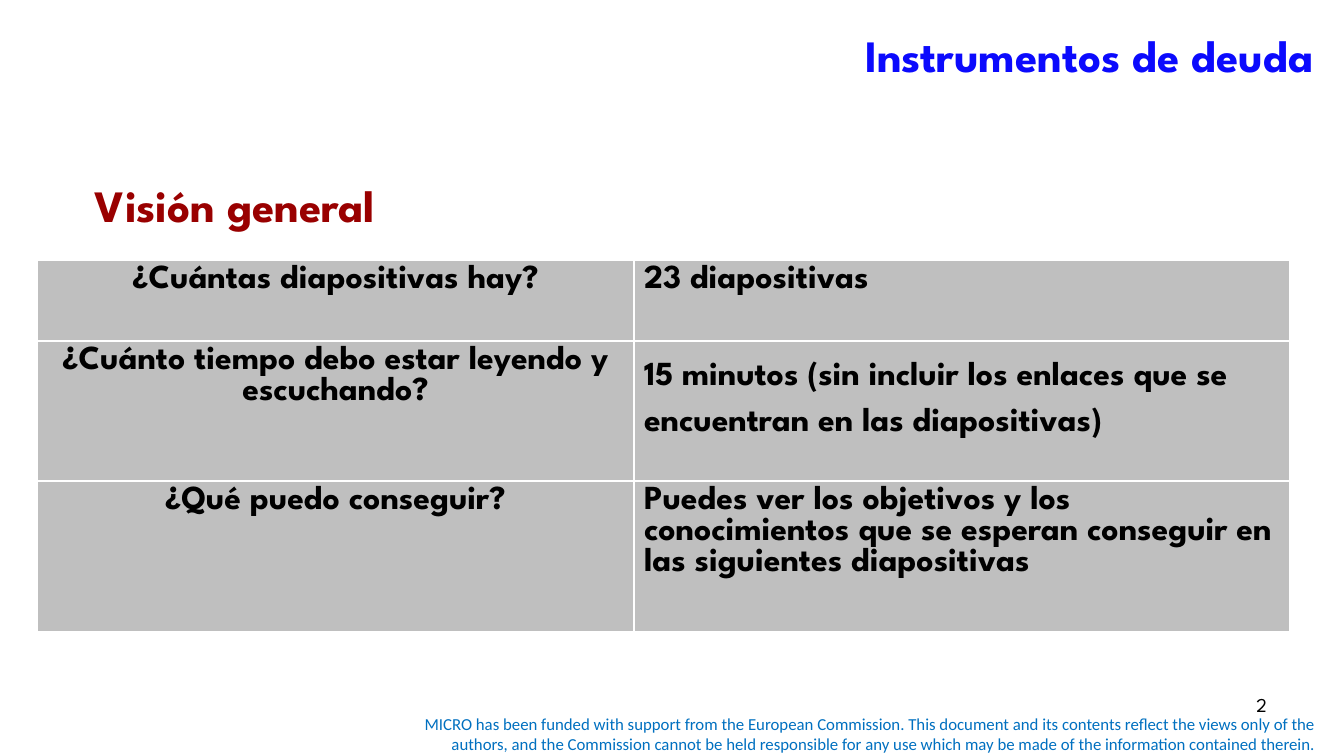
from lxml import etree
from pptx import Presentation
from pptx import util as u
from pptx.dml.color import RGBColor
from pptx.enum import text
from pptx.oxml import ns

PX = 914400 / 100.8
COLORS = {
    "title": "0B0AFD",
    "heading": "990000",
    "ink": "000000",
    "cell": "BFBFBF",
    "grid": "FFFFFF",
    "funding": "0070C0",
}
LEFT, CENTER, RIGHT = text.PP_ALIGN.LEFT, text.PP_ALIGN.CENTER, text.PP_ALIGN.RIGHT
TOP, MIDDLE, BOTTOM = text.MSO_ANCHOR.TOP, text.MSO_ANCHOR.MIDDLE, text.MSO_ANCHOR.BOTTOM


def px(length):
    return u.Emu(round(length * PX))


class SlideBuilder:
    font = "League Spartan"

    def __init__(self, deck):
        self.page = deck.slides.add_slide(deck.slide_layouts[6])

    def add_words(self, frame, words, size, color, align=LEFT, bold=True, font=None, spacing=None):
        para = frame.paragraphs[0]
        para.alignment = align
        if spacing:
            para.line_spacing = spacing
        span = para.add_run()
        span.text = words
        span.font.name = font or self.font
        span.font.size = u.Pt(size)
        span.font.bold = bold
        span.font.color.rgb = RGBColor.from_string(COLORS[color])

    def label(self, place, words, size, color, anchor=TOP, bottom_inset=5, **style):
        box = self.page.shapes.add_textbox(*map(px, place))
        frame = box.text_frame
        frame.word_wrap = True
        frame.vertical_anchor = anchor
        frame.margin_bottom = px(bottom_inset)
        self.add_words(frame, words, size, color, **style)

    def table(self, left, top, widths, heights, rows):
        """Each row holds a centred question and an answer with its line spacing."""
        frame = self.page.shapes.add_table(
            len(heights), len(widths), px(left), px(top), px(sum(widths)), px(sum(heights)))
        table = frame.table
        table.first_row = table.horz_banding = False
        for column, width in zip(table.columns, widths):
            column.width = px(width)
        for row, height, (question, answer, spacing) in zip(table.rows, heights, rows):
            row.height = px(height)
            self.cell(row.cells[0], question, CENTER)
            self.cell(row.cells[1], answer, LEFT, spacing)

    def cell(self, cell, words, align, spacing=None):
        cell.fill.solid()
        cell.fill.fore_color.rgb = RGBColor.from_string(COLORS["cell"])
        self.add_words(cell.text_frame, words, 24, "ink", align, spacing=spacing)
        properties = cell._tc.get_or_add_tcPr()
        for index, side in enumerate("LRTB"):
            line = etree.Element(ns.qn(f"a:ln{side}"), w=str(u.Pt(1)))
            fill = etree.SubElement(line, ns.qn("a:solidFill"))
            etree.SubElement(fill, ns.qn("a:srgbClr"), val=COLORS["grid"])
            properties.insert(index, line)


def main():
    deck = Presentation()
    deck.slide_width, deck.slide_height = px(1344), px(756)
    slide = SlideBuilder(deck)

    slide.label(
        (378, 709, 948, 50),
        "MICRO has been funded with support from the European Commission. "
        "This document and its contents reflect the views only of the authors, "
        "and the Commission cannot be held responsible for any use which may be "
        "made of the information contained therein.",
        12, "funding", MIDDLE, align=RIGHT, bold=False, font="Calibri")
    slide.label((115, 0, 1209, 126), "Instrumentos de deuda", 32, "title",
                MIDDLE, bottom_inset=21, align=RIGHT)
    slide.table(37, 260, (597, 656), (81, 140, 151), [
        ("¿Cuántas diapositivas hay?", "23 diapositivas", None),
        ("¿Cuánto tiempo debo estar leyendo y escuchando?",
         "15 minutos (sin incluir los enlaces que se encuentran en las diapositivas)", 1.5),
        ("¿Qué puedo conseguir?",
         "Puedes ver los objetivos y los conocimientos que se esperan conseguir "
         "en las siguientes diapositivas", None),
    ])
    slide.label((964, 688, 313, 52), "2", 14, "ink", align=RIGHT, bold=False)
    slide.label((85, 172, 485, 65), "Visión general", 32, "heading", BOTTOM)

    deck.save("out.pptx")


if __name__ == "__main__":
    main()
